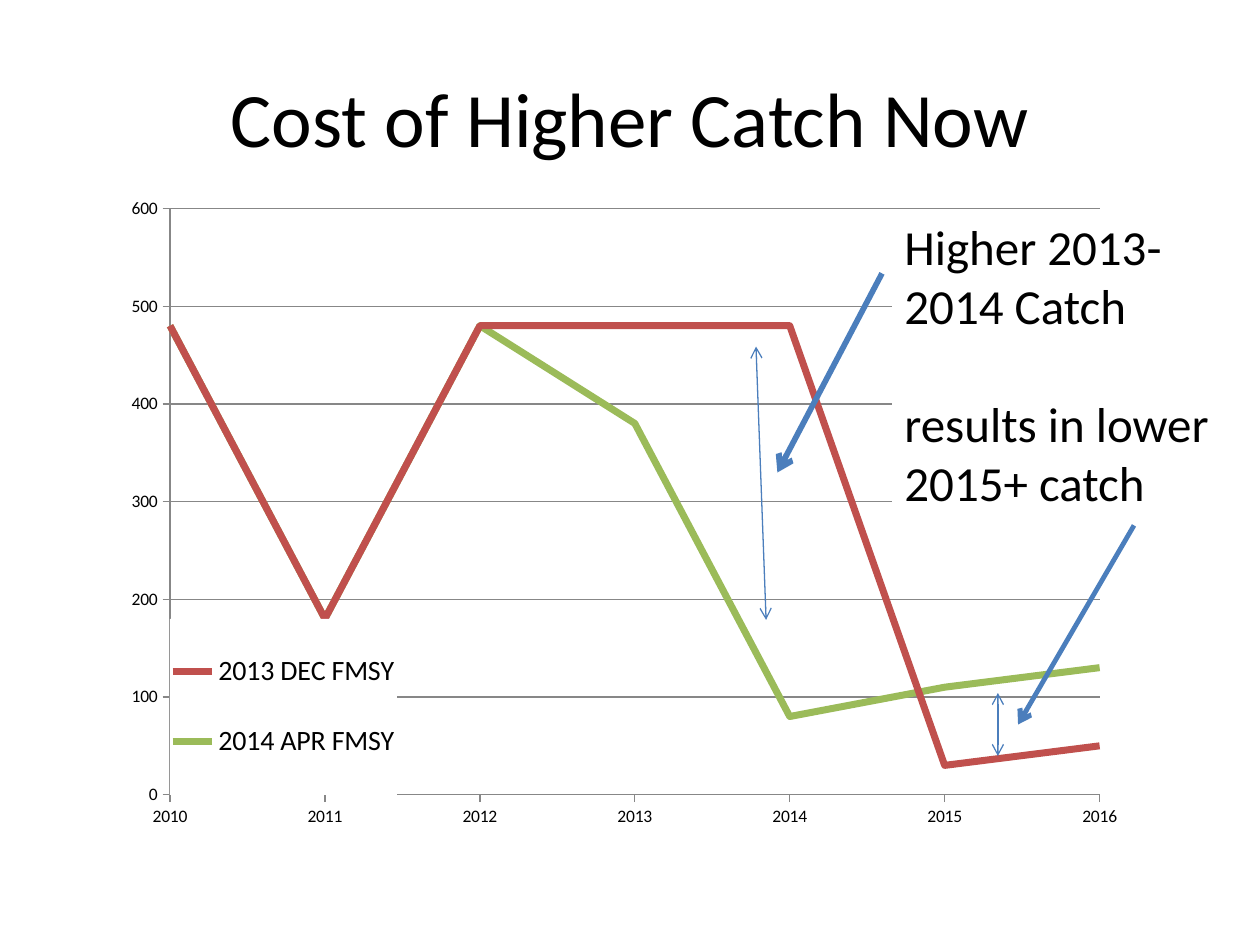
from dataclasses import dataclass

from lxml import etree
from pptx import Presentation
from pptx import util as u
from pptx.chart.data import XyChartData
from pptx.dml.color import RGBColor
from pptx.enum import chart as charts, shapes, text
from pptx.oxml import parse_xml
from pptx.oxml.ns import nsdecls, qn


@dataclass(frozen=True)
class Theme:
    font: str = "Calibri"
    black: RGBColor = RGBColor(0, 0, 0)
    white: RGBColor = RGBColor(255, 255, 255)
    grid: RGBColor = RGBColor(0x87, 0x87, 0x87)
    arrow: RGBColor = RGBColor(0x4B, 0x7E, 0xBC)
    red: RGBColor = RGBColor(0xC0, 0x50, 0x4D)
    green: RGBColor = RGBColor(0x9B, 0xBB, 0x59)
    title: u.Pt = u.Pt(44)
    note: u.Pt = u.Pt(28)
    legend: u.Pt = u.Pt(16)
    axis: u.Pt = u.Pt(10)


theme = Theme()


def style_font(font, size):
    font.name, font.size, font.bold = theme.font, size, False
    font.color.rgb = theme.black


def set_layout(parent, position, x, y, width, height, inner=False):
    """Give a chart part a fixed place, in fractions of the chart."""
    for old in parent.findall(qn("c:layout")):
        parent.remove(old)
    target = '<c:layoutTarget val="inner"/>' if inner else ""
    parent.insert(position, parse_xml(
        f'<c:layout {nsdecls("c")}><c:manualLayout>{target}'
        '<c:xMode val="edge"/><c:yMode val="edge"/>'
        f'<c:x val="{x}"/><c:y val="{y}"/><c:w val="{width}"/><c:h val="{height}"/>'
        '</c:manualLayout></c:layout>'))


deck = Presentation()
deck.slide_width, deck.slide_height = u.Inches(10), u.Inches(7.5)
page = deck.slides.add_slide(deck.slide_layouts[6])

# Title
title = page.shapes.add_textbox(u.Inches(0.5), u.Inches(0.3), u.Inches(9), u.Inches(1.25))
title.text_frame.word_wrap = True
title.text_frame.vertical_anchor = text.MSO_ANCHOR.MIDDLE
title.text_frame.text = "Cost of Higher Catch Now"
para = title.text_frame.paragraphs[0]
para.alignment = text.PP_ALIGN.CENTER
style_font(para.runs[0].font, theme.title)

# Catch by year under the two assessments
catches = {
    "2013 DEC FMSY": (theme.red, [480, 180, 480, 480, 480, 30, 50]),
    "2014 APR FMSY": (theme.green, [480, 180, 480, 380, 80, 110, 130]),
}
data = XyChartData()
for name, (_, values) in catches.items():
    series = data.add_series(name)
    for year, value in enumerate(values, 2010):
        series.add_data_point(year, value)
chart = page.shapes.add_chart(
    charts.XL_CHART_TYPE.XY_SCATTER_LINES_NO_MARKERS,
    u.Inches(0.92), u.Inches(1.5), u.Inches(8.58), u.Inches(5.17), data).chart
chart.has_title = False
style_font(chart.font, theme.axis)
plot = chart.plots[0]
plot.vary_by_categories = False
for series, (color, _) in zip(plot.series, catches.values()):
    series.format.line.color.rgb = color
    series.format.line.width = u.Pt(4)
    series.marker.style = charts.XL_MARKER_STYLE.NONE

# Axes
for axis, low, high, step, has_grid in ((chart.category_axis, 2010, 2016, 1, False),
                                        (chart.value_axis, 0, 600, 100, True)):
    axis.minimum_scale, axis.maximum_scale, axis.major_unit = low, high, step
    axis.has_major_gridlines = has_grid
    axis.major_tick_mark = charts.XL_TICK_MARK.OUTSIDE
    axis.minor_tick_mark = charts.XL_TICK_MARK.NONE
    axis.tick_labels.number_format = "General"
    axis.tick_labels.number_format_is_linked = False
    axis.format.line.color.rgb = theme.grid
    axis.format.line.width = u.Pt(0.75)
grid_line = chart.value_axis.major_gridlines.format.line
grid_line.color.rgb = theme.grid
grid_line.width = u.Pt(0.75)
plot_area = chart.element.find(".//" + qn("c:plotArea"))
set_layout(plot_area, 0, 0.05, 0.03, 0.86, 0.9, inner=True)

# Legend on a white panel inside the plot
chart.has_legend = True
chart.legend.position = charts.XL_LEGEND_POSITION.RIGHT
chart.legend.include_in_layout = False
style_font(chart.legend.font, theme.legend)
legend = chart.element.find(".//" + qn("c:legend"))
set_layout(legend, 1, 0.05, 0.66, 0.21, 0.27)
legend.find(qn("c:txPr")).addprevious(parse_xml(
    f'<c:spPr {nsdecls("c", "a")}><a:solidFill><a:srgbClr val="{theme.white}"/>'
    '</a:solidFill></c:spPr>'))

# Note panel
note = page.shapes.add_shape(shapes.MSO_SHAPE.RECTANGLE, u.Inches(7.08), u.Inches(1.67),
                             u.Inches(2.92), u.Inches(2.46))
note.shadow.inherit = False
note.fill.solid()
note.fill.fore_color.rgb = theme.white
note.line.fill.background()
note.text_frame.word_wrap = True
note.text_frame.vertical_anchor = text.MSO_ANCHOR.TOP
note.text_frame.text = "Higher 2013-2014 Catch\nresults in lower 2015+ catch"
for para in note.text_frame.paragraphs:
    para.alignment = text.PP_ALIGN.LEFT
    style_font(para.runs[0].font, theme.note)
note.text_frame.paragraphs[1].space_before = u.Pt(34)

# Arrows: thin double ones span the gaps, thick ones lead from the note
arrows = [
    ((7.92, 5.5), (7.92, 6), 0.75, ("headEnd", "tailEnd")),
    ((6, 2.75), (6.08, 4.92), 0.75, ("headEnd", "tailEnd")),
    ((7, 2.17), (6.17, 3.75), 3.25, ("tailEnd",)),
    ((9, 4.17), (8.08, 5.75), 2.75, ("tailEnd",)),
]
for start, end, width, ends in arrows:
    arrow = page.shapes.add_connector(shapes.MSO_CONNECTOR.STRAIGHT,
                                      *map(u.Inches, start + end))
    arrow.line.color.rgb = theme.arrow
    arrow.line.width = u.Pt(width)
    properties = arrow.element.spPr
    for tip in ends:
        etree.SubElement(properties.find(qn("a:ln")), qn("a:" + tip), type="arrow")
    etree.SubElement(properties, qn("a:effectLst"))

deck.save("out.pptx")
